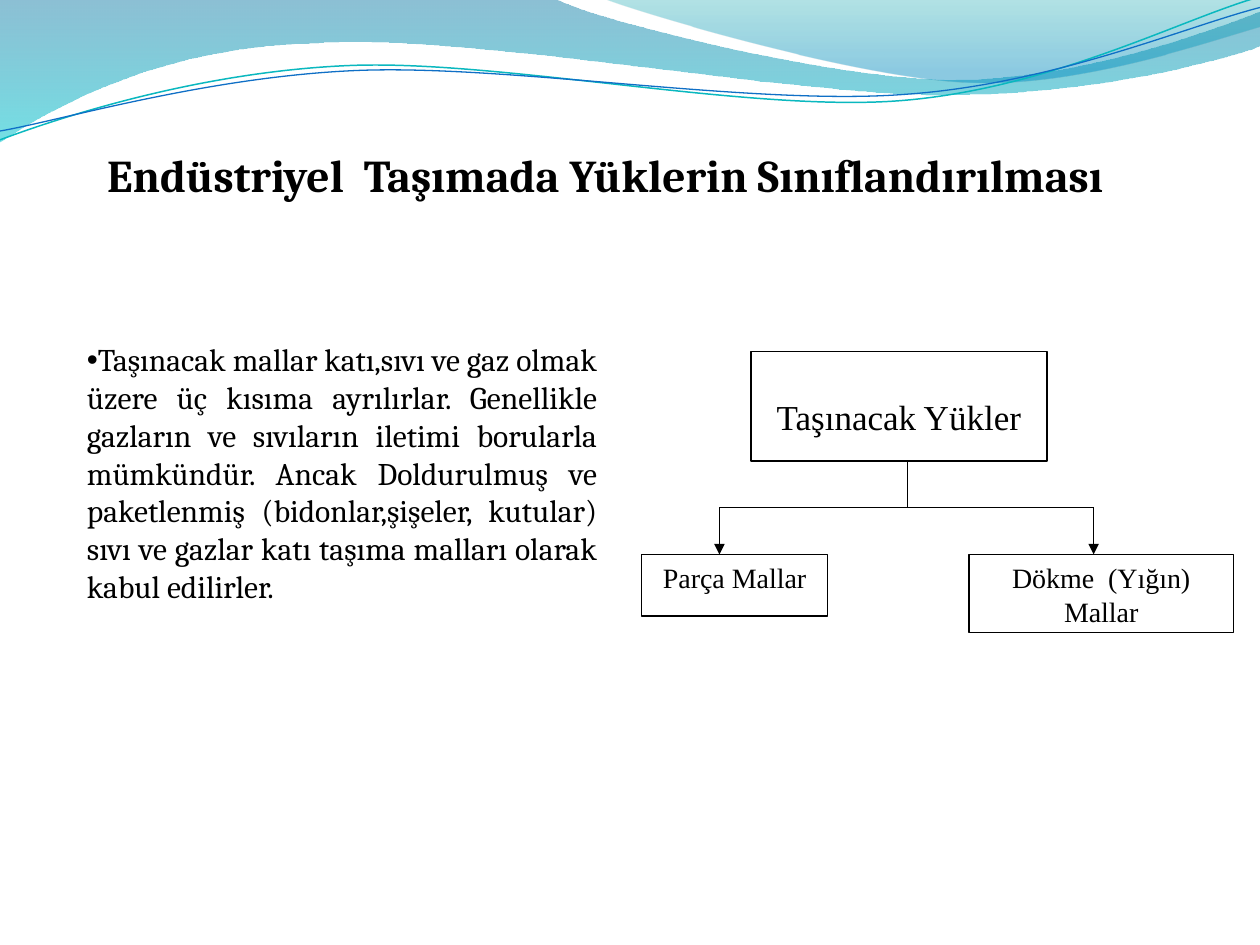
from math import cos, radians, sin

from pptx import Presentation
from pptx.dml.color import RGBColor
from pptx.enum.shapes import MSO_CONNECTOR as Connector, MSO_SHAPE as Shape
from pptx.enum.text import MSO_ANCHOR as Anchor, MSO_AUTO_SIZE as AutoSize, PP_ALIGN as Align
from pptx.oxml.ns import qn
from pptx.util import Inches, Pt
from lxml.etree import Element, SubElement

TITLE = "Endüstriyel  Taşımada Yüklerin Sınıflandırılması"
BODY = (
    "Taşınacak mallar katı,sıvı ve gaz olmak üzere üç kısıma ayrılırlar. "
    "Genellikle gazların ve sıvıların iletimi borularla mümkündür. "
    "Ancak Doldurulmuş ve paketlenmiş (bidonlar,şişeler, kutular) sıvı ve gazlar "
    "katı taşıma malları olarak kabul edilirler."
)
BLACK = "000000"

# A path is a start point, then points (2 numbers) and cubic curves (6 numbers).
BANDS = [
    ([(0, 0), (4.4, -0.01), (4.76, 0.17, 6.64, 0.63, 7.58, 0.63),
      (8.53, 0.63, 9.58, 0.26, 10, 0.09), (10.01, 0.36),
      (9.83, 0.44, 8.7, 0.76, 7.46, 0.75), (6.22, 0.75, 3.82, 0.28, 2.57, 0.34),
      (1.29, 0.36, 0.46, 0.83, -0.01, 1.13)],
     [(0, "0074A1", 45), (1, "00C6CF", 55)]),
    ([(4.79, -0.01), (5.09, 0.11, 6.82, 0.62, 7.69, 0.65),
      (8.56, 0.69, 9.61, 0.32, 10, 0.21), (10, 0)],
     [(0, "00A1A9", 30), (0.8, "008BBF", 45)]),
]
WAVE_ROTATION = 357.3
# path, centre, colour, line width
WAVES = [
    ([(0, 1.11), (0.48, 0.93, 1.58, 0.57, 2.77, 0.52),
      (3.95, 0.47, 5.93, 0.89, 7.13, 0.8), (8.33, 0.71, 9.38, 0.15, 9.98, -0.02)],
     (4.99, 0.58), "0AB8BF", 0.85),
    ([(0, 1.04), (0.47, 0.96, 1.64, 0.61, 2.83, 0.56),
      (4.03, 0.51, 5.97, 0.84, 7.17, 0.75), (8.36, 0.67, 9.41, 0.21, 10, 0.06)],
     (5, 0.59), "0F6FC6", 0.75),
]

# text, left, top, width, height, font size, top margin
BOXES = [
    ("Taşınacak Yükler", 5.96, 2.79, 2.35, 0.87, 20, 0.35),
    ("Parça Mallar", 5.09, 4.4, 1.48, 0.49, 16, 0.05),
    ("Dökme  (Yığın) Mallar", 7.69, 4.4, 2.1, 0.62, 16, 0.05),
]
TRUNK_X, BRANCH_XS = 7.2, (5.71, 8.68)
TRUNK_TOP, FORK_Y, BRANCH_END = 3.66, 4.03, 4.4


def rgb(color):
    return RGBColor.from_string(color)


def pairs(segment):
    return list(zip(segment[::2], segment[1::2]))


def rotate(path, center, degrees):
    """Turn every point of a path clockwise about the centre."""
    cosine, sine = cos(radians(degrees)), sin(radians(degrees))
    cx, cy = center
    return [
        [value for x, y in pairs(segment)
         for value in (cx + (x - cx) * cosine - (y - cy) * sine,
                       cy + (x - cx) * sine + (y - cy) * cosine)]
        for segment in path
    ]


def add_outline(shapes, path, closed):
    """Draw a freeform, joining each three points of a curve into one Bézier."""
    points = [(Inches(x), Inches(y)) for segment in path for x, y in pairs(segment)]
    builder = shapes.build_freeform(*points[0])
    builder.add_line_segments(points[1:], close=closed)
    shape = builder.convert_to_shape()
    shape.shadow.inherit = False
    lines = iter(list(shape.element.iter(qn("a:lnTo"))))
    for segment in path[1:]:
        group = [next(lines) for _ in pairs(segment)]
        if len(group) == 3:
            curve = Element(qn("a:cubicBezTo"))
            group[0].addprevious(curve)
            for line in group:
                curve.append(line[0])
                line.getparent().remove(line)
    return shape


def add_band(shapes, path, stops):
    band = add_outline(shapes, path, True)
    band.line.fill.background()
    band.fill.gradient()
    band.fill.gradient_angle = 270
    for stop, (position, color, _) in zip(band.fill.gradient_stops, stops):
        stop.position = position
        stop.color.rgb = rgb(color)
    for element, (_, _, opacity) in zip(band.element.iter(qn("a:srgbClr")), stops):
        SubElement(element, qn("a:alpha"), val=str(opacity * 1000))


def add_wave(shapes, path, center, color, width):
    wave = add_outline(shapes, rotate(path, center, -WAVE_ROTATION), False)
    wave.rotation = WAVE_ROTATION
    wave.fill.background()
    wave.line.color.rgb = rgb(color)
    wave.line.width = Pt(width)


def set_font(paragraph, name, size, bold=False):
    font = paragraph.font
    font.name, font.size, font.bold = name, Pt(size), bold
    font.color.rgb = rgb(BLACK)


def place(shape, left, top, width, height):
    shape.left, shape.top = Inches(left), Inches(top)
    shape.width, shape.height = Inches(width), Inches(height)


def add_box(shapes, text, left, top, width, height, size, margin_top):
    box = shapes.add_shape(
        Shape.RECTANGLE, Inches(left), Inches(top), Inches(width), Inches(height))
    box.shadow.inherit = False
    box.fill.solid()
    box.fill.fore_color.rgb = rgb("FFFFFF")
    box.line.color.rgb = rgb(BLACK)
    box.line.width = Pt(0.75)
    frame = box.text_frame
    frame.word_wrap = True
    frame.vertical_anchor = Anchor.TOP
    frame.margin_top = Inches(margin_top)
    frame.text = text
    frame.paragraphs[0].alignment = Align.CENTER
    set_font(frame.paragraphs[0], "Times New Roman", size)


def add_line(shapes, x1, y1, x2, y2, arrow=False):
    line = shapes.add_connector(
        Connector.STRAIGHT, Inches(x1), Inches(y1), Inches(x2), Inches(y2))
    line.line.color.rgb = rgb(BLACK)
    line.line.width = Pt(0.75)
    if arrow:
        SubElement(line.line._get_or_add_ln(), qn("a:tailEnd"), type="triangle")
    SubElement(line.element.spPr, qn("a:effectLst"))


def fill_title(title):
    place(title, 0.75, 1.08, 8.75, 0.6)
    frame = title.text_frame
    frame.auto_size = AutoSize.NONE
    frame.vertical_anchor = Anchor.MIDDLE
    frame.text = TITLE
    frame.paragraphs[0].alignment = Align.LEFT
    set_font(frame.paragraphs[0], "Cambria", 26, bold=True)


def fill_body(body):
    place(body, 0.59, 2.65, 4.25, 2.5)
    frame = body.text_frame
    frame.auto_size = AutoSize.NONE
    frame.text = BODY
    paragraph = frame.paragraphs[0]
    paragraph.alignment = Align.JUSTIFY
    paragraph.space_before = Pt(0)
    properties = paragraph._p.get_or_add_pPr()
    properties.set("marL", "0")
    properties.set("indent", "0")
    SubElement(properties, qn("a:buChar"), char="•")
    set_font(paragraph, "Cambria", 18)


def main():
    presentation = Presentation()
    presentation.slide_width, presentation.slide_height = Inches(10), Inches(7.5)
    slide = presentation.slides.add_slide(presentation.slide_layouts[1])
    shapes = slide.shapes
    for band in BANDS:
        add_band(shapes, *band)
    for wave in WAVES:
        add_wave(shapes, *wave)
    fill_title(shapes.title)
    fill_body(slide.placeholders[1])
    for box in BOXES:
        add_box(shapes, *box)
    add_line(shapes, TRUNK_X, TRUNK_TOP, TRUNK_X, FORK_Y)
    for x in BRANCH_XS:
        add_line(shapes, TRUNK_X, FORK_Y, x, FORK_Y)
        add_line(shapes, x, FORK_Y, x, BRANCH_END, arrow=True)
    presentation.save("out.pptx")


if __name__ == "__main__":
    main()
